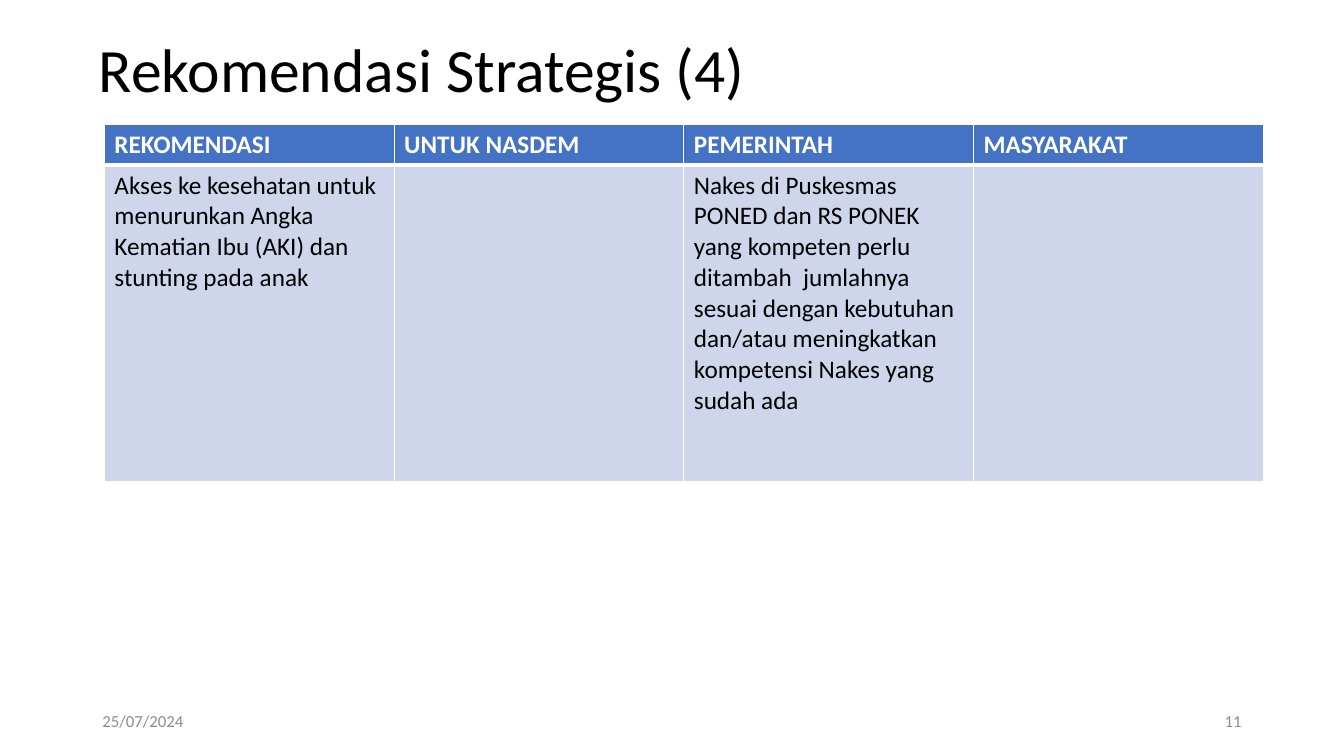
from dataclasses import dataclass

from lxml import etree
from pptx import Presentation
from pptx import util as u
from pptx.dml.color import RGBColor
from pptx.enum import text
from pptx.oxml import ns


@dataclass(frozen=True)
class Theme:
    """Colours, font and type sizes of the deck."""
    font: str = "Calibri"
    ink: str = "000000"
    paper: str = "FFFFFF"
    muted: str = "8C8C8C"
    header: str = "4472C4"
    band: str = "CFD5EA"
    title_size: int = 44
    table_size: int = 18
    footer_size: int = 12
    thin: int = 1
    thick: int = 3


THEME = Theme()
LEFT, RIGHT = text.PP_ALIGN.LEFT, text.PP_ALIGN.RIGHT
HEADINGS = ["REKOMENDASI", "UNTUK NASDEM", "PEMERINTAH", "MASYARAKAT"]
ACTIONS = [
    "Akses ke kesehatan untuk menurunkan Angka Kematian Ibu (AKI) "
    "dan stunting pada anak",
    "",
    "Nakes di Puskesmas PONED dan RS PONEK yang kompeten perlu "
    "ditambah  jumlahnya sesuai dengan kebutuhan dan/atau meningkatkan "
    "kompetensi Nakes yang sudah ada",
    "",
]


def write(p, words, size, color, bold=False):
    """Add one formatted run to a paragraph."""
    r = p.add_run()
    r.text = words
    formats = {"name": THEME.font, "size": u.Pt(size), "bold": bold}
    for key, value in formats.items():
        setattr(r.font, key, value)
    r.font.color.rgb = RGBColor.from_string(color)


def add_label(s, box, words, size, color, align=LEFT, spacing=1.0):
    """Place one vertically centred line of text in the box."""
    tf = s.shapes.add_textbox(*(u.Cm(n) for n in box)).text_frame
    formats = {"word_wrap": True, "vertical_anchor": text.MSO_ANCHOR.MIDDLE}
    for key, value in formats.items():
        setattr(tf, key, value)
    p = tf.paragraphs[0]
    p.alignment, p.line_spacing = align, spacing
    write(p, words, size, color)


def add_borders(cell, widths):
    """Draw the cell's edges, given as widths in points by side."""
    tc_pr = cell._tc.get_or_add_tcPr()
    for i, (side, width) in enumerate(widths.items()):
        ln = etree.Element(ns.qn(f"a:ln{side}"), w=str(u.Pt(width)))
        fill = etree.SubElement(ln, ns.qn("a:solidFill"))
        etree.SubElement(fill, ns.qn("a:srgbClr"), val=THEME.paper)
        tc_pr.insert(i, ln)


def add_recommendations(s, box, header_height):
    """Fill the box with a header row and one row of recommendations."""
    left, top, width, height = box
    table = s.shapes.add_table(2, len(HEADINGS), *(u.Cm(n) for n in box)).table
    for column in table.columns:
        column.width = u.Cm(width / len(HEADINGS))
    rows = [
        (HEADINGS, header_height, THEME.header, THEME.paper, True),
        (ACTIONS, height - header_height, THEME.band, THEME.ink, False),
    ]
    for i, (entries, row_height, fill, color, bold) in enumerate(rows):
        table.rows[i].height = u.Cm(row_height)
        widths = dict.fromkeys("LRTB", THEME.thin)
        widths["B" if bold else "T"] = THEME.thick
        for cell, words in zip(table.rows[i].cells, entries):
            cell.fill.solid()
            cell.fill.fore_color.rgb = RGBColor.from_string(fill)
            add_borders(cell, widths)
            if words:
                p = cell.text_frame.paragraphs[0]
                write(p, words, THEME.table_size, color, bold)


def add_footer(s, box, date, number):
    """Put the date at the left end of the box and the number at the right."""
    left, top, width, height = box
    part = 7.62
    for x, words, align in [(left, date, LEFT),
                            (left + width - part, number, RIGHT)]:
        add_label(s, (x, top, part, height), words,
                  THEME.footer_size, THEME.muted, align)


def main():
    """Build and save the slide."""
    prs = Presentation()
    prs.slide_width, prs.slide_height = u.Cm(33.87), u.Cm(19.05)
    s = prs.slides.add_slide(prs.slide_layouts[6])
    add_label(s, (2.24, 0, 29.21, 3.68), "Rekomendasi Strategis (4)",
              THEME.title_size, THEME.ink, spacing=0.9)
    add_recommendations(s, (2.63, 3.13, 29.21, 9.0), 1.03)
    add_footer(s, (2.33, 17.65, 29.21, 1.02), "25/07/2024", "11")
    prs.save("out.pptx")


if __name__ == "__main__":
    main()
